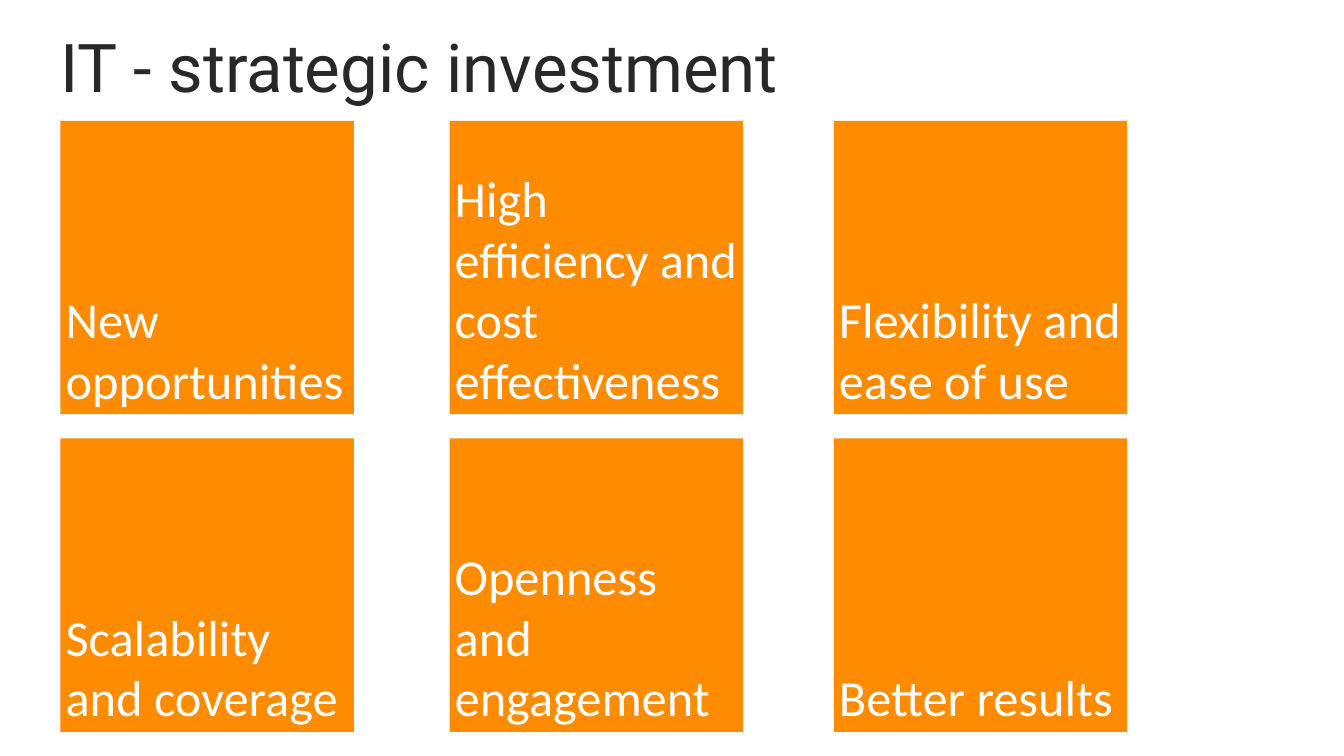
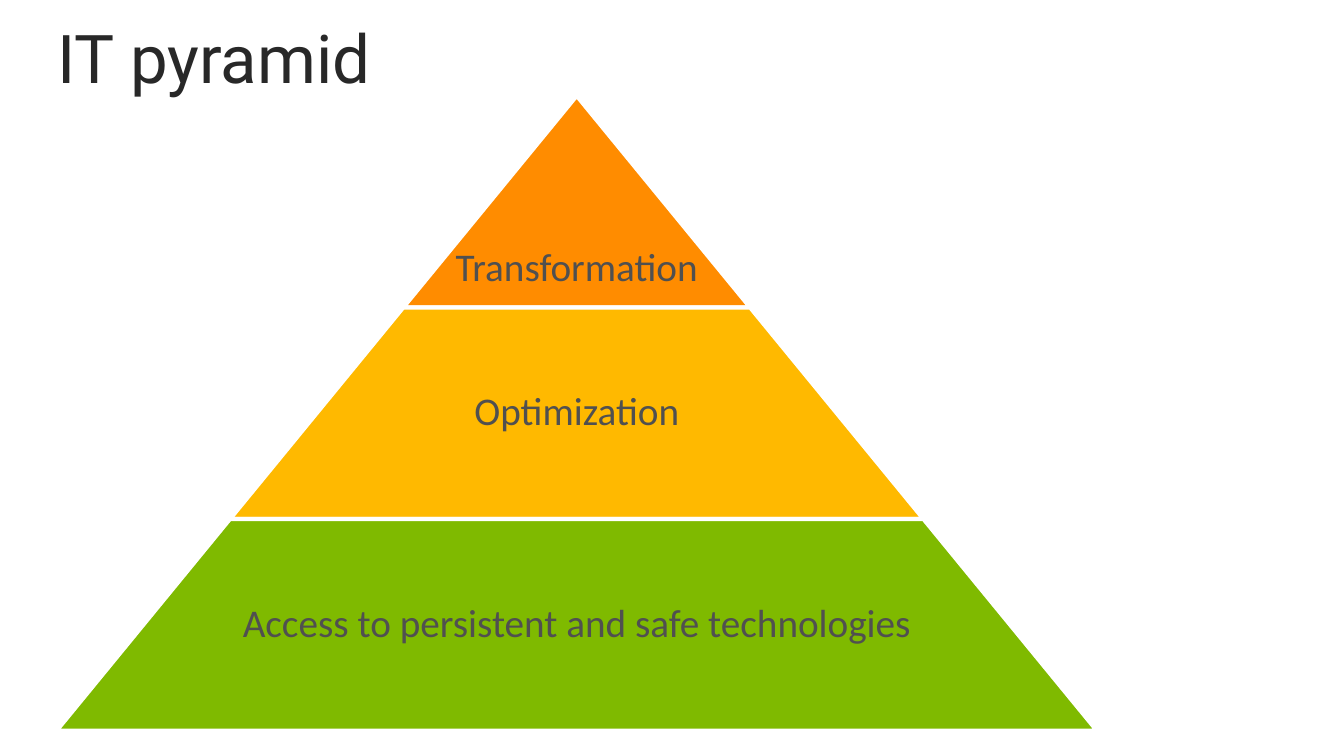
from pptx import Presentation, util as u
from pptx.dml.color import RGBColor
from pptx.enum import shapes, text

PX = 9144
WHITE = RGBColor(0xFF, 0xFF, 0xFF)
INK = RGBColor(0x28, 0x28, 0x28)
GREY = RGBColor(0x50, 0x50, 0x50)
ORANGE = RGBColor(0xFF, 0x8C, 0x00)
AMBER = RGBColor(0xFF, 0xB9, 0x00)
GREEN = RGBColor(0x7F, 0xBA, 0x00)


class Deck:
    """Holds the shared style and the current slide, and draws its elements."""

    TITLE = {"name": "Roboto", "size": u.Pt(48), "color": INK}
    TILE = {"name": "Calibri", "size": u.Pt(36), "color": WHITE}
    TIER = {"name": "Calibri", "size": u.Pt(28), "color": GREY}

    def __init__(self):
        self.file = Presentation()
        self.file.slide_width = 1333 * PX
        self.file.slide_height = 750 * PX

    def page(self, title, left, top):
        self.shapes = self.file.slides.add_slide(self.file.slide_layouts[6]).shapes
        box = self.shapes.add_textbox(*(n * PX for n in (left, top, 1219, 73)))
        self.label(box, title, self.TITLE, spacing=0.9)

    def label(self, box, words, style, inset=0, bottom=None, spacing=1.0,
              anchor=text.MSO_ANCHOR.TOP, align=text.PP_ALIGN.LEFT):
        frame = box.text_frame
        margins = {"margin_" + side: inset * PX for side in ("left", "top", "right")}
        margins["margin_bottom"] = (inset if bottom is None else bottom) * PX
        layout = {"word_wrap": True, "vertical_anchor": anchor, **margins}
        for key, value in layout.items():
            setattr(frame, key, value)
        para = frame.paragraphs[0]
        para.alignment, para.line_spacing = align, spacing
        span = para.add_run()
        span.text = words
        for key, value in style.items():
            if key == "color":
                span.font.color.rgb = value
            else:
                setattr(span.font, key, value)

    def paint(self, shape, color):
        shape.shadow.inherit = False
        shape.fill.solid()
        shape.fill.fore_color.rgb = color

    def tile(self, left, top, side, words):
        tile = self.shapes.add_shape(shapes.MSO_SHAPE.RECTANGLE,
                                     *(n * PX for n in (left, top, side, side)))
        self.paint(tile, ORANGE)
        tile.line.fill.background()
        self.label(tile, words, self.TILE, inset=5, anchor=text.MSO_ANCHOR.BOTTOM)

    def tier(self, points, color, words, **placing):
        pen = self.shapes.build_freeform(*points[0], scale=PX)
        pen.add_line_segments(points[1:], close=True)
        tier = pen.convert_to_shape()
        self.paint(tier, color)
        tier.line.color.rgb = WHITE
        tier.line.width = u.Pt(3)
        self.label(tier, words, self.TIER, inset=3, spacing=0.9,
                   align=text.PP_ALIGN.CENTER, **placing)


def main():
    deck = Deck()

    deck.page("IT - strategic investment", 60, 34)
    rows = {
        120: ("New opportunities", "High efficiency and cost effectiveness",
              "Flexibility and ease of use"),
        435: ("Scalability and coverage", "Openness and engagement", "Better results"),
    }
    for top, row in rows.items():
        for left, words in zip((60, 446, 827), row):
            deck.tile(left, top, 291, words)

    deck.page("IT pyramid", 57, 25)
    middle, apex, height, slope = 572, 95, 210, 172
    low = {"anchor": text.MSO_ANCHOR.BOTTOM, "bottom": 17}
    centred = {"anchor": text.MSO_ANCHOR.MIDDLE}
    tiers = (
        (ORANGE, "Transformation", low),
        (AMBER, "Optimization", centred),
        (GREEN, "Access to persistent and safe technologies", centred),
    )
    for level, (color, words, placing) in enumerate(tiers):
        top, base = apex + level * height, apex + (level + 1) * height
        inner, outer = level * slope, (level + 1) * slope
        points = [(middle - outer, base), (middle - inner, top),
                  (middle + inner, top), (middle + outer, base)]
        deck.tier(points, color, words, **placing)

    deck.file.save("out.pptx")


if __name__ == "__main__":
    main()
